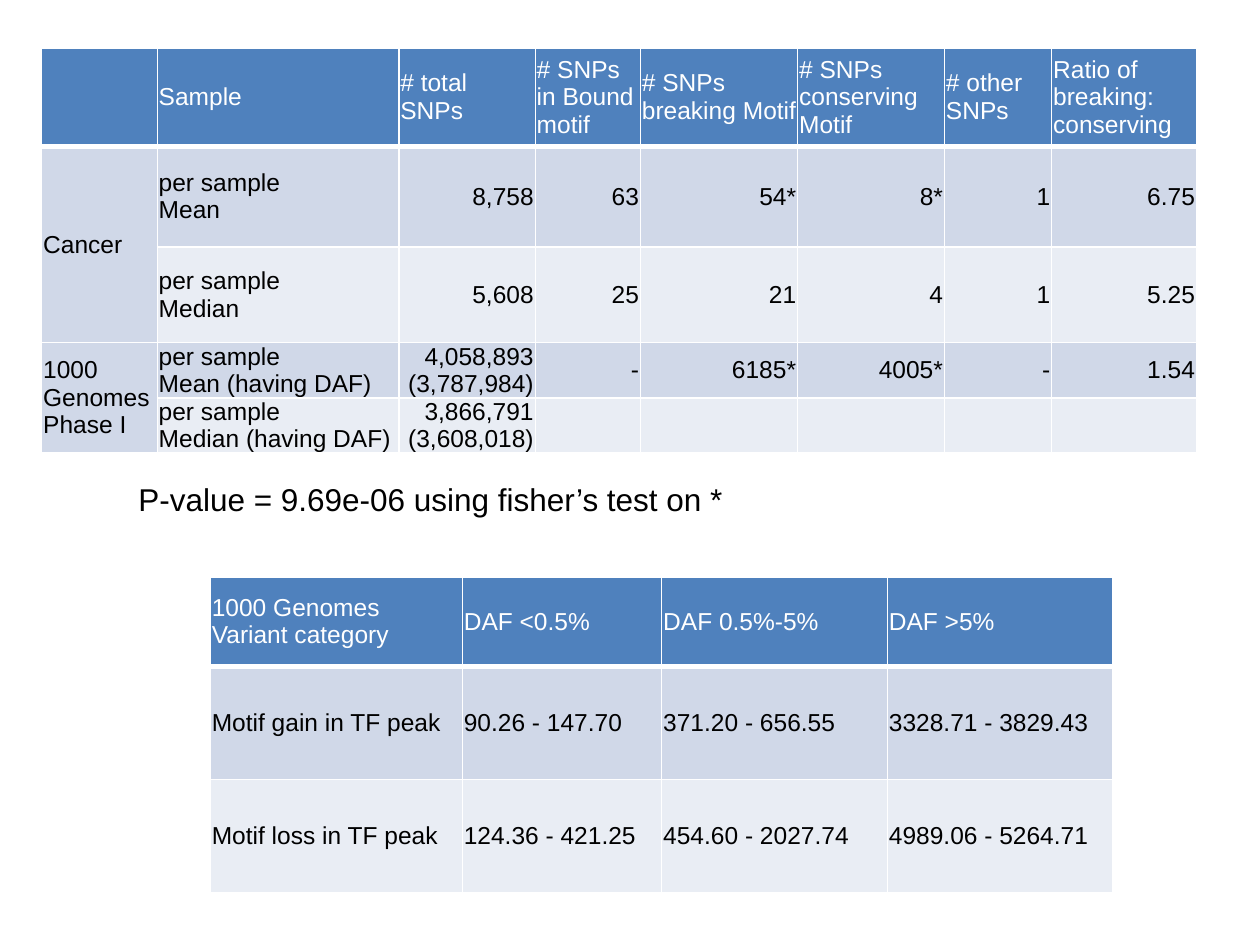
from lxml import etree
from pptx import Presentation, util as u
from pptx.dml.color import RGBColor
from pptx.enum import text
from pptx.oxml.ns import qn

WHITE, BLACK = "FFFFFF", "000000"
HEADER_FILL, BAND_FILLS = "4F81BD", ("D0D8E8", "E9EDF4")

SNP_COUNTS = {
    "position": (0.84, 0.97),
    "columns": (2.33, 4.87, 2.75, 2.12, 3.17, 2.96, 2.16, 2.92),
    "heights": (1.98, 2.03, 1.93, 1.04, 1.04),
    "rows": [
        ("", "Sample", "# total SNPs", "# SNPs in Bound motif", "# SNPs breaking Motif",
         "# SNPs conserving Motif", "# other SNPs", "Ratio of breaking:\nconserving"),
        ("Cancer", "per sample\nMean", "8,758", "63", "54*", "8*", "1", "6.75"),
        ("", "per sample\nMedian", "5,608", "25", "21", "4", "1", "5.25"),
        ("1000 Genomes Phase I", "per sample\nMean (having DAF)",
         "4,058,893 (3,787,984)", "-", "6185*", "4005*", "-", "1.54"),
        ("", "per sample\nMedian (having DAF)", "3,866,791 (3,608,018)", "", "", "", "", ""),
    ],
    "first_number_column": 2,
    "group_starts": (1, 3),
}
DAF_RANGES = {
    "position": (4.24, 11.63),
    "columns": (5.08, 4.02, 4.55, 4.55),
    "heights": (1.8, 2.28, 2.28),
    "rows": [
        ("1000 Genomes Variant category", "DAF <0.5%", "DAF 0.5%-5%", "DAF >5%"),
        ("Motif gain in TF peak", "90.26 - 147.70", "371.20 - 656.55", "3328.71 - 3829.43"),
        ("Motif loss in TF peak", "124.36 - 421.25", "454.60 - 2027.74", "4989.06 - 5264.71"),
    ],
    "first_number_column": 4,
    "group_starts": (),
}
P_VALUE = "P-value = 9.69e-06 using fisher’s test on *"


def color(hex_value):
    return RGBColor.from_string(hex_value)


def write_text(frame, content, size=14, font_color=BLACK, align=text.PP_ALIGN.LEFT):
    """Fill a text frame, one paragraph per line of content."""
    for index, line in enumerate(content.split("\n")):
        paragraph = frame.add_paragraph() if index else frame.paragraphs[0]
        paragraph.alignment = align
        if line:
            run = paragraph.add_run()
            run.text = line
            run.font.name = "Arial"
            run.font.size = u.Pt(size)
            run.font.color.rgb = color(font_color)


def set_borders(cell, top=1, bottom=1):
    """Draw white borders; widths are in points."""
    properties = cell._tc.get_or_add_tcPr()
    sides = (("lnL", 1), ("lnR", 1), ("lnT", top), ("lnB", bottom))
    for index, (side, width) in enumerate(sides):
        line = etree.Element(qn(f"a:{side}"), w=str(u.Pt(width)))
        fill = etree.SubElement(line, qn("a:solidFill"))
        etree.SubElement(fill, qn("a:srgbClr"), val=WHITE)
        properties.insert(index, line)


def add_table(slide, data):
    rows, columns, heights = data["rows"], data["columns"], data["heights"]
    left, top = data["position"]
    table = slide.shapes.add_table(
        len(rows), len(columns), u.Cm(left), u.Cm(top),
        u.Cm(sum(columns)), u.Cm(sum(heights))).table
    for column, width in zip(table.columns, columns):
        column.width = u.Cm(width)
    for row_index, values in enumerate(rows):
        table.rows[row_index].height = u.Cm(heights[row_index])
        is_header = row_index == 0
        for column_index, value in enumerate(values):
            cell = table.cell(row_index, column_index)
            cell.margin_left = cell.margin_right = u.Cm(0.03)
            cell.margin_top = cell.margin_bottom = 0
            cell.vertical_anchor = text.MSO_ANCHOR.MIDDLE
            cell.fill.solid()
            cell.fill.fore_color.rgb = color(
                HEADER_FILL if is_header else BAND_FILLS[(row_index - 1) % 2])
            set_borders(cell, top=3 if row_index == 1 else 1, bottom=3 if is_header else 1)
            is_number = not is_header and column_index >= data["first_number_column"]
            write_text(cell.text_frame, value,
                       font_color=WHITE if is_header else BLACK,
                       align=text.PP_ALIGN.RIGHT if is_number else text.PP_ALIGN.LEFT)
    for start in data["group_starts"]:
        table.cell(start, 0).merge(table.cell(start + 1, 0))


def main():
    presentation = Presentation()
    presentation.slide_width, presentation.slide_height = u.Cm(25.4), u.Cm(19.05)
    slide = presentation.slides.add_slide(presentation.slide_layouts[6])
    for data in (SNP_COUNTS, DAF_RANGES):
        add_table(slide, data)
    note = slide.shapes.add_textbox(u.Cm(2.54), u.Cm(9.55), u.Cm(12.37), u.Cm(1.02))
    note.text_frame.word_wrap = False
    note.text_frame.auto_size = text.MSO_AUTO_SIZE.SHAPE_TO_FIT_TEXT
    write_text(note.text_frame, P_VALUE, size=18)
    presentation.save("out.pptx")


if __name__ == "__main__":
    main()
